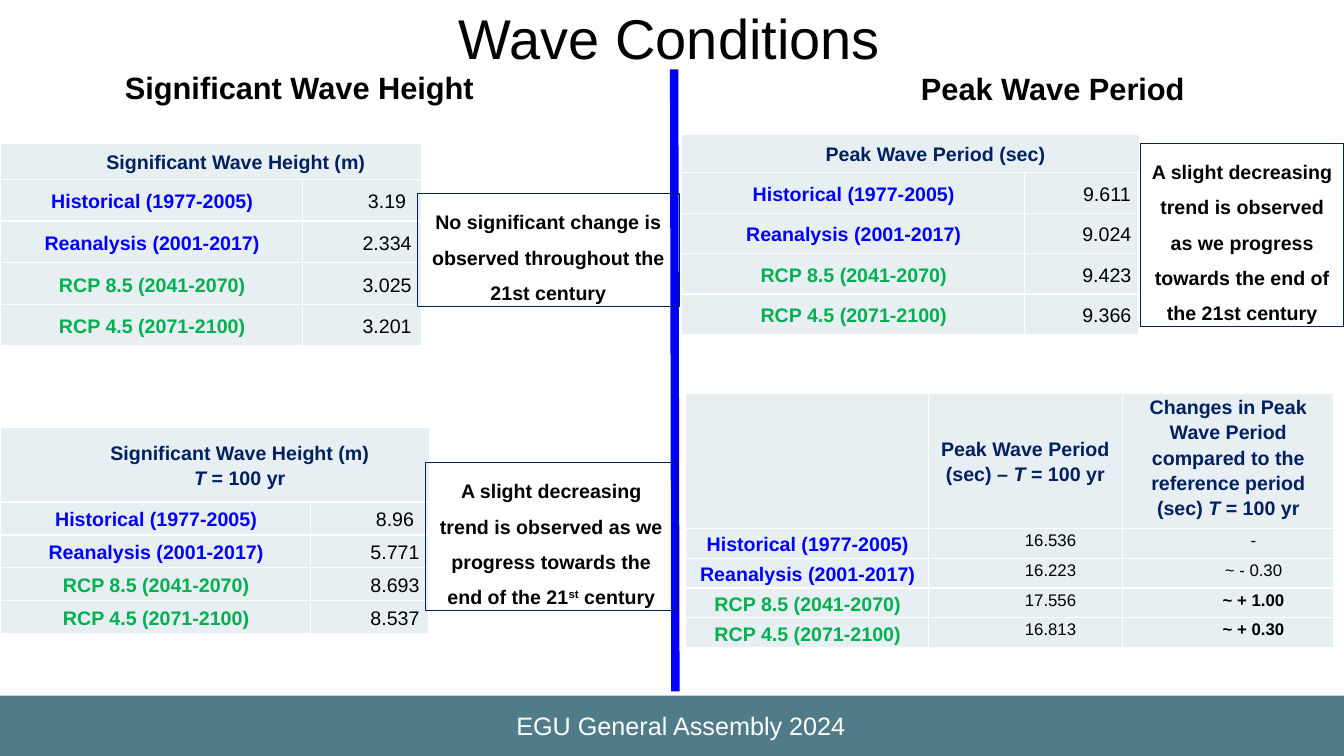
from dataclasses import dataclass, field

from lxml import etree
from pptx import Presentation
from pptx import util as u
from pptx.dml import color
from pptx.enum import shapes, text
from pptx.oxml import ns

NAVY, BLUE, GREEN = "002060", "0000FF", "00B050"
BLACK, WHITE, PALE, TEAL = "000000", "FFFFFF", "E8EFF3", "507C89"
HANGING = (1.27, -1.22)
INDENTED = (1.27, 0)
FLUSH = (0, 0)
PERIODS = [
    ("Historical (1977-2005)", BLUE),
    ("Reanalysis (2001-2017)", BLUE),
    ("RCP 8.5 (2041-2070)", GREEN),
    ("RCP 4.5 (2071-2100)", GREEN),
]


@dataclass
class Span:
    text: str
    italic: bool = False
    superscript: bool = False


RETURN_PERIOD = [Span("T", italic=True), Span(" = 100 yr")]


@dataclass
class Entry:
    """Content of one table cell: paragraphs made of spans."""
    paragraphs: list[list[Span]]
    colour: str = BLACK
    size: float = 14
    bold: bool = False
    indent: tuple[float, float] = INDENTED
    top: bool = False


@dataclass
class TextBlock:
    box: tuple[float, float, float, float]
    spans: list[Span]
    size: float
    colour: str = BLACK
    bold: bool = False
    centred: bool = True
    format: dict = field(default_factory=dict)
    spacing: float = 1.0
    outline: str | None = None


@dataclass
class WaveTable:
    left: float
    top: float
    columns: list[float]
    header_height: float
    row_height: float
    header: list[Entry]
    values: list[list[Entry]]


def heading(*paragraphs: list[Span], **options) -> Entry:
    return Entry(list(paragraphs), NAVY, bold=True, **options)


def numbers(*figures: str) -> list[list[Entry]]:
    return [[Entry([[Span(figure)]])] for figure in figures]


def change_row(period: str, change: str, bold: bool) -> list[Entry]:
    return [Entry([[Span(period)]], size=12, top=True),
            Entry([[Span(change)]], size=12, bold=bold, top=True)]


FIT = {"auto_size": text.MSO_AUTO_SIZE.SHAPE_TO_FIT_TEXT}
MIDDLE = {"vertical_anchor": text.MSO_ANCHOR.MIDDLE}
NOTE = {"size": 14, "bold": True, "format": FIT, "spacing": 1.5, "outline": NAVY}

TITLES = [
    TextBlock((6.58, 17.78, 21.16, 1.02), [Span("EGU General Assembly 2024")], 18, WHITE),
    TextBlock((0.79, -0.08, 32.16, 2.01), [Span("Wave Conditions")], 40, format=MIDDLE),
    TextBlock((2.9, 1.6, 9.42, 1.19), [Span("Significant Wave Height")], 22,
              bold=True, centred=False, format=FIT),
    TextBlock((22.96, 1.63, 7.92, 1.19), [Span("Peak Wave Period")], 22,
              bold=True, centred=False, format=FIT),
]
NOTES = [
    TextBlock((10.52, 4.88, 6.6, 2.84),
              [Span("No significant change is observed throughout the 21st century")], **NOTE),
    TextBlock((10.72, 11.66, 6.35, 3.73),
              [Span("A slight decreasing trend is observed as we progress towards the end of the 21"),
               Span("st", superscript=True), Span(" century")], **NOTE),
    TextBlock((28.75, 3.61, 5.11, 4.62),
              [Span("A slight decreasing trend is observed as we progress towards "
                    "the end of the 21st century")], **NOTE),
]
TABLES = [
    WaveTable(0, 3.61, [7.62, 3], 0.91, 1.05,
              [heading([Span("Significant Wave Height (m)")])],
              numbers("3.19", "2.334", "3.025", "3.201")),
    WaveTable(0, 10.77, [7.82, 3], 1.88, 0.83,
              [heading([Span("Significant Wave Height (m)")], RETURN_PERIOD)],
              numbers("8.96", "5.771", "8.693", "8.537")),
    WaveTable(17.17, 3.38, [8.64, 2.9], 0.97, 1.02,
              [heading([Span("Peak Wave Period (sec)")])],
              numbers("9.611", "9.024", "9.423", "9.366")),
    WaveTable(17.27, 9.91, [6.12, 4.9, 5.33], 3.4, 0.75,
              [heading(indent=FLUSH),
               heading([Span("Peak Wave Period (sec) – "), *RETURN_PERIOD], indent=FLUSH),
               heading([Span("Changes in Peak Wave Period compared to the reference period (sec) "),
                        *RETURN_PERIOD], indent=FLUSH, top=True)],
              [change_row("16.536", "-", False), change_row("16.223", "~ - 0.30", False),
               change_row("17.556", "~ + 1.00", True), change_row("16.813", "~ + 0.30", True)]),
]


def rgb(value: str) -> color.RGBColor:
    return color.RGBColor.from_string(value)


def apply(target, values: dict) -> None:
    for name, value in values.items():
        setattr(target, name, value)


def write_spans(paragraph, spans: list[Span], size: float, colour: str, bold: bool) -> None:
    for span in spans:
        run = paragraph.add_run()
        run.text = span.text
        apply(run.font, {"name": "Arial", "size": u.Pt(size), "bold": bold, "italic": span.italic})
        run.font.color.rgb = rgb(colour)
        if span.superscript:
            run._r.get_or_add_rPr().set("baseline", "30000")


def draw_text(slide, block: TextBlock) -> None:
    place = [u.Cm(length) for length in block.box]
    if block.outline:
        shape = slide.shapes.add_shape(shapes.MSO_SHAPE.RECTANGLE, *place)
        shape.shadow.inherit = False
        shape.fill.background()
        shape.line.color.rgb = rgb(block.outline)
        shape.line.width = u.Pt(0.75)
    else:
        shape = slide.shapes.add_textbox(*place)
    apply(shape.text_frame, {"word_wrap": True, "vertical_anchor": text.MSO_ANCHOR.TOP} | block.format)
    paragraph = shape.text_frame.paragraphs[0]
    alignment = text.PP_ALIGN.CENTER if block.centred else text.PP_ALIGN.LEFT
    apply(paragraph, {"alignment": alignment, "line_spacing": block.spacing})
    write_spans(paragraph, block.spans, block.size, block.colour, block.bold)


def set_borders(cell, widths: dict[str, float]) -> None:
    properties = cell._tc.get_or_add_tcPr()
    for side, width in widths.items():
        line = etree.SubElement(properties, ns.qn(f"a:ln{side}"), w=str(u.Pt(width)))
        fill = etree.SubElement(line, ns.qn("a:solidFill"))
        etree.SubElement(fill, ns.qn("a:srgbClr"), val=WHITE)


def fill_cell(cell, entry: Entry) -> None:
    anchor = text.MSO_ANCHOR.TOP if entry.top else text.MSO_ANCHOR.MIDDLE
    apply(cell, {"margin_left": u.Cm(0.18), "margin_right": u.Cm(0.18),
                 "margin_top": 0, "margin_bottom": 0, "vertical_anchor": anchor})
    frame = cell.text_frame
    for index, spans in enumerate(entry.paragraphs):
        paragraph = frame.add_paragraph() if index else frame.paragraphs[0]
        apply(paragraph, {"alignment": text.PP_ALIGN.CENTER, "line_spacing": 1.15})
        for name, length in zip(("marL", "indent"), entry.indent):
            paragraph._p.get_or_add_pPr().set(name, str(u.Cm(length)))
        write_spans(paragraph, spans, entry.size, entry.colour, entry.bold)


def draw_table(slide, wave: WaveTable) -> None:
    labels = [Entry([[Span(name)]], colour, bold=True, indent=HANGING) for name, colour in PERIODS]
    rows = [wave.header] + [[label, *values] for label, values in zip(labels, wave.values)]
    heights = [wave.header_height] + [wave.row_height] * len(labels)
    last_row, last_column = len(rows) - 1, len(wave.columns) - 1
    table = slide.shapes.add_table(
        len(rows), len(wave.columns), u.Cm(wave.left), u.Cm(wave.top),
        u.Cm(sum(wave.columns)), u.Cm(sum(heights))).table
    apply(table, {"first_row": False, "horz_banding": False})
    for column, width in zip(table.columns, wave.columns):
        column.width = u.Cm(width)
    for row, height in zip(table.rows, heights):
        row.height = u.Cm(height)
    if len(wave.header) == 1:
        table.cell(0, 0).merge(table.cell(0, last_column))
    for r, entries in enumerate(rows):
        for c in range(last_column + 1):
            cell = table.cell(r, c)
            outer = {"L": c == 0, "R": c == last_column, "T": r == 0, "B": r == last_row}
            set_borders(cell, {side: 1.5 if edge else 1 for side, edge in outer.items()})
            cell.fill.solid()
            cell.fill.fore_color.rgb = rgb(PALE)
            if c < len(entries):
                fill_cell(cell, entries[c])


def draw_footer_band(slide) -> None:
    band = slide.shapes.add_shape(shapes.MSO_SHAPE.RECTANGLE, 0, u.Cm(17.53), u.Cm(33.87), u.Cm(1.52))
    band.shadow.inherit = False
    band.fill.solid()
    band.fill.fore_color.rgb = rgb(TEAL)
    band.line.fill.background()


def draw_divider(slide) -> None:
    divider = slide.shapes.add_connector(
        shapes.MSO_CONNECTOR.STRAIGHT, u.Cm(17.02), u.Cm(17.42), u.Cm(16.99), u.Cm(1.75))
    divider.line.color.rgb = rgb(BLUE)
    divider.line.width = u.Pt(6)
    etree.SubElement(divider._element.spPr, ns.qn("a:effectLst"))


def main() -> None:
    presentation = Presentation()
    apply(presentation, {"slide_width": u.Cm(33.87), "slide_height": u.Cm(19.05)})
    slide = presentation.slides.add_slide(presentation.slide_layouts[6])
    draw_footer_band(slide)
    draw_divider(slide)
    for block in TITLES:
        draw_text(slide, block)
    for wave in TABLES:
        draw_table(slide, wave)
    for block in NOTES:
        draw_text(slide, block)
    presentation.save("out.pptx")


if __name__ == "__main__":
    main()
